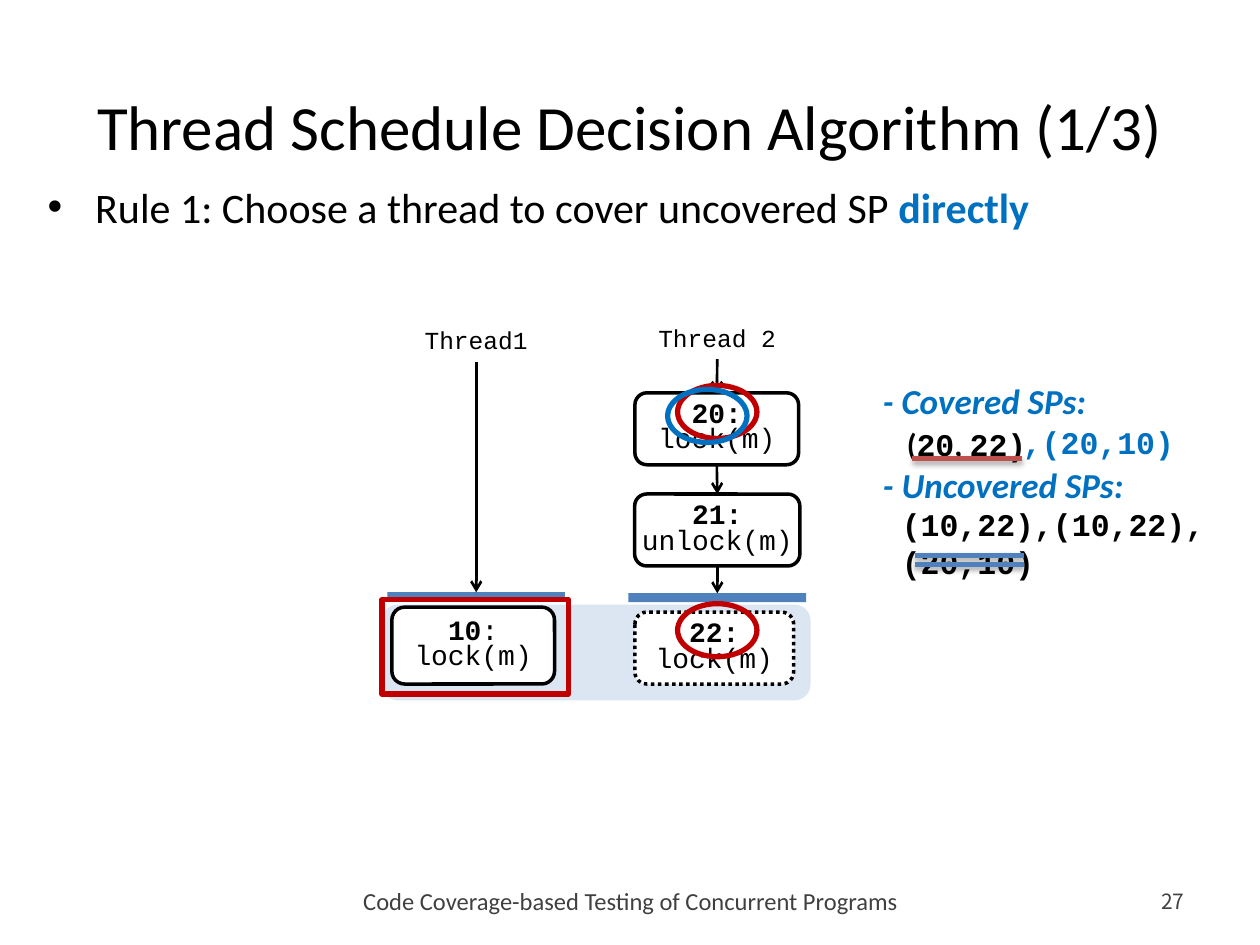
from lxml.etree import SubElement
from pptx import Presentation
from pptx.dml.color import RGBColor
from pptx.enum.dml import MSO_LINE
from pptx.enum.shapes import MSO_CONNECTOR, MSO_SHAPE
from pptx.enum.text import MSO_ANCHOR, MSO_AUTO_SIZE, PP_ALIGN
from pptx.oxml.ns import qn
from pptx.util import Cm, Pt

THEME = {
    "black": "000000", "white": "FFFFFF", "gray": "404040", "blue": "0070C0",
    "red": "C00000", "bar": "4F81BD", "strike": "C0504D", "area": "DCE6F2",
    "sans": "Calibri", "mono": "Courier New", "number": "Noto Sans CJK KR",
    "title": 36, "rule": 24, "heading": 20, "pair": 18, "code": 16, "label": 14, "page": 12,
}

# A run is (text, font, size, colour, style); style holds "b" and/or "i".
TITLE = [("Thread Schedule Decision Algorithm (1/3)", "sans", "title", "black", "")]
RULE = [("Rule 1: Choose a thread to cover uncovered SP ", "sans", "rule", "black", ""),
        ("directly", "sans", "rule", "blue", "b")]
FOOTER = [("Code Coverage-based Testing of Concurrent Programs", "sans", "label", "gray", "")]
PAGE = [("27", "number", "page", "gray", "")]

# Lengths below are centimetres; columns are centre lines.
COLUMNS = {1: 9.6, 2: 14.46}
LABELS = {1: ("Thread1", 6.43), 2: ("Thread 2", 6.38)}
BARS = {1: 11.94, 2: 11.96}
# line number, separator style, call, centre, top, width, height, line dash
STATEMENTS = [
    ("20", "b", "lock(m)", 14.45, 7.92, 3.3, 1.45, None),
    ("21", "b", "unlock(m)", 14.46, 9.96, 3.33, 1.45, None),
    ("22", "b", "lock(m)", 14.4, 12.34, 3.2, 1.45, MSO_LINE.ROUND_DOT),
    ("10", "", "lock(m)", 9.54, 12.24, 3.28, 1.55, None),
]
# shape, colour, centre, top, width, height
MARKS = [
    (MSO_SHAPE.OVAL, "red", 14.46, 7.77, 1.6, 1.07),
    (MSO_SHAPE.OVAL, "red", 14.46, 12.17, 1.6, 1.07),
    (MSO_SHAPE.OVAL, "blue", 14.26, 7.85, 1.6, 1.07),
    (MSO_SHAPE.RECTANGLE, "red", 9.58, 12.09, 3.76, 1.9),
]
# indent, space before in points, runs
PAIRS = [
    (0, 0, [("- Covered SPs:", "sans", "heading", "blue", "bi")]),
    (0.48, 2.4, [("(", "sans", "pair", "black", "b"), ("20", "mono", "pair", "black", "b"),
                 (", ", "sans", "pair", "black", "b"), ("22)", "mono", "pair", "black", "b")]),
    (0, 0, [("- Uncovered SPs:", "sans", "heading", "blue", "bi")]),
    (0.38, 0, [("(10,22),(10,22),", "mono", "pair", "black", "b")]),
    (0.38, 0, [("(20,10)", "mono", "pair", "black", "b")]),
]
NEWLY_COVERED = [(",(20,10)", "mono", "pair", "blue", "b")]
# left, y, colour
STRIKES = [(18.44, 11.2, "bar"), (18.44, 11.38, "bar"), (18.39, 9.25, "strike")]
STRIKE_WIDTH = 2.21


def color(name):
    return RGBColor.from_string(THEME[name])


def add_runs(paragraph, runs):
    for text, font, size, ink, style in runs:
        run = paragraph.add_run()
        run.text = text
        run.font.name = THEME[font]
        run.font.size = Pt(THEME[size])
        run.font.color.rgb = color(ink)
        run.font.bold = "b" in style
        run.font.italic = "i" in style


def add_paragraph(frame, number, runs, align=PP_ALIGN.LEFT):
    paragraph = frame.add_paragraph() if number else frame.paragraphs[0]
    paragraph.alignment = align
    add_runs(paragraph, runs)
    return paragraph


def set_indent(paragraph, left, first=0):
    properties = paragraph._p.get_or_add_pPr()
    properties.set("marL", str(Cm(left)))
    properties.set("indent", str(Cm(first)))
    return properties


def add_text(slide, box, runs, align=PP_ALIGN.LEFT, anchor=MSO_ANCHOR.TOP):
    shape = slide.shapes.add_textbox(*map(Cm, box))
    shape.text_frame.word_wrap = True
    shape.text_frame.vertical_anchor = anchor
    if runs:
        add_paragraph(shape.text_frame, 0, runs, align)
    return shape


def add_block(slide, kind, center, top, width, height, fill=None, line=None, weight=0):
    shape = slide.shapes.add_shape(
        kind, Cm(center - width / 2), Cm(top), Cm(width), Cm(height))
    shape.shadow.inherit = False
    if fill:
        shape.fill.solid()
        shape.fill.fore_color.rgb = color(fill)
    else:
        shape.fill.background()
    if line:
        shape.line.color.rgb = color(line)
        shape.line.width = Pt(weight)
    else:
        shape.line.fill.background()
    return shape


def add_statement(slide, number, colon_style, call, center, top, width, height, dash):
    shape = add_block(slide, MSO_SHAPE.ROUNDED_RECTANGLE, center, top, width, height,
                      "white", "black", 2)
    if dash:
        shape.line.dash_style = dash
    frame = shape.text_frame
    frame.word_wrap = True
    frame.vertical_anchor = MSO_ANCHOR.MIDDLE
    frame.margin_left = frame.margin_right = frame.margin_top = frame.margin_bottom = 0
    lines = [[(number, "mono", "code", "black", "b"), (":", "mono", "code", "black", colon_style)],
             [(call, "mono", "code", "black", "")]]
    for index, runs in enumerate(lines):
        add_paragraph(frame, index, runs, PP_ALIGN.CENTER).line_spacing = 0.75
    return shape


def add_line(slide, start, end, ink, weight):
    """Add a straight connector and return it with its empty effect list."""
    line = slide.shapes.add_connector(MSO_CONNECTOR.STRAIGHT, *map(Cm, start + end))
    line.line.color.rgb = color(ink)
    line.line.width = Pt(weight)
    return line, SubElement(line._element.spPr, qn("a:effectLst"))


def add_arrow(slide, upper, lower):
    """Join the bottom of one shape to the top of another."""
    arrow, _ = add_line(slide, (0, 0), (0, 0), "black", 1.5)
    arrow.begin_connect(upper, 2)
    arrow.end_connect(lower, 0)
    SubElement(arrow.line._get_or_add_ln(), qn("a:tailEnd"), type="arrow")


def add_strike(slide, left, y, ink):
    _, effects = add_line(slide, (left, y), (left + STRIKE_WIDTH, y), ink, 3)
    shadow = SubElement(effects, qn("a:outerShdw"), blurRad="40000", dist="23000",
                        dir="5400000", rotWithShape="0")
    shade = SubElement(shadow, qn("a:srgbClr"), val=THEME["black"])
    SubElement(shade, qn("a:alpha"), val="35000")


def add_heading(slide):
    title = slide.shapes.title
    title.left, title.top, title.width, title.height = map(Cm, (1.27, 1.52, 22.86, 2.01))
    title.text_frame.auto_size = MSO_AUTO_SIZE.NONE
    title.text_frame.vertical_anchor = MSO_ANCHOR.MIDDLE
    add_paragraph(title.text_frame, 0, TITLE, PP_ALIGN.CENTER)

    rule = add_text(slide, (0.71, 3.53, 23.39, 1.27), RULE)
    properties = set_indent(rule.text_frame.paragraphs[0], 0.96, -0.96)
    SubElement(properties, qn("a:buFont"), typeface="Arial")
    SubElement(properties, qn("a:buChar"), char="•")


def add_threads(slide):
    add_block(slide, MSO_SHAPE.ROUNDED_RECTANGLE, 12.02, 12.19, 8.64, 1.93, "area")
    statements = {row[0]: add_statement(slide, *row) for row in STATEMENTS}
    bars = {thread: add_block(slide, MSO_SHAPE.RECTANGLE, COLUMNS[thread], top, 3.58, 0.18, "bar")
            for thread, top in BARS.items()}
    labels = {thread: add_text(slide, (COLUMNS[thread] - 1.66, top, 3.32, 0.86),
                               [(text, "mono", "label", "black", "")], PP_ALIGN.CENTER)
              for thread, (text, top) in LABELS.items()}
    flows = [[labels[1], bars[1]],
             [labels[2], statements["20"], statements["21"], bars[2]]]
    for flow in flows:
        for upper, lower in zip(flow, flow[1:]):
            add_arrow(slide, upper, lower)
    for kind, ink, *box in MARKS:
        add_block(slide, kind, *box, line=ink, weight=3)


def add_pairs(slide):
    frame = add_text(slide, (17.55, 7.52, 8.36, 4.37), None).text_frame
    for index, (indent, before, runs) in enumerate(PAIRS):
        paragraph = add_paragraph(frame, index, runs)
        paragraph.space_before = Pt(before)
        set_indent(paragraph, indent)
    add_text(slide, (20.37, 8.41, 3.81, 1.02), NEWLY_COVERED)
    for strike in STRIKES:
        add_strike(slide, *strike)


def main():
    presentation = Presentation()
    presentation.slide_width, presentation.slide_height = Cm(25.4), Cm(19.05)
    slide = presentation.slides.add_slide(presentation.slide_layouts[5])
    add_heading(slide)
    add_threads(slide)
    add_pairs(slide)
    add_text(slide, (4.09, 17.65, 17.25, 1.02), FOOTER, PP_ALIGN.CENTER, MSO_ANCHOR.MIDDLE)
    add_text(slide, (22.71, 17.65, 1.42, 1.02), PAGE, PP_ALIGN.RIGHT, MSO_ANCHOR.MIDDLE)
    presentation.save("out.pptx")


if __name__ == "__main__":
    main()
